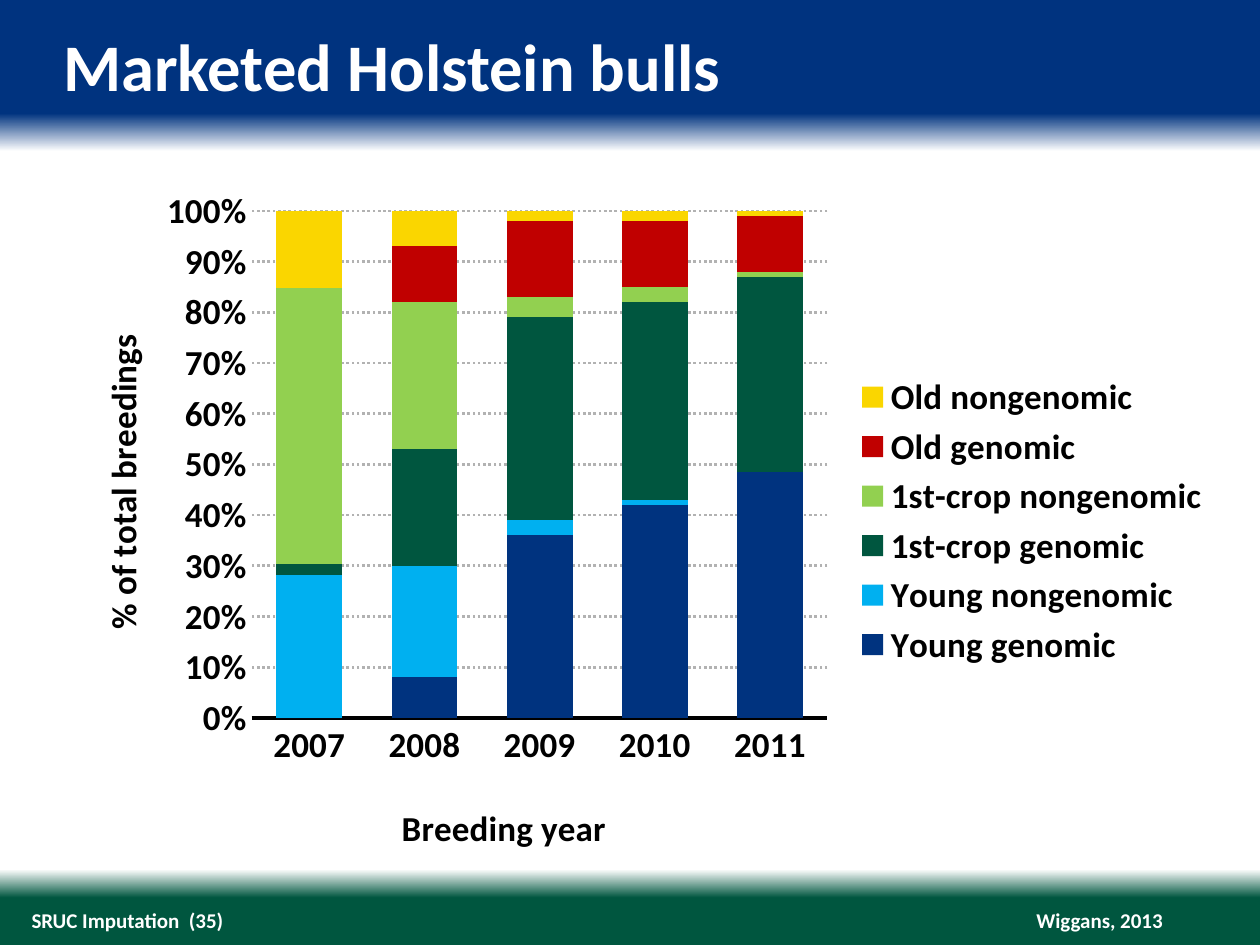
from lxml.etree import SubElement
from pptx import Presentation
from pptx.chart.data import CategoryChartData
from pptx.dml.color import RGBColor
from pptx.enum.chart import XL_CHART_TYPE, XL_LEGEND_POSITION, XL_TICK_MARK
from pptx.enum.dml import MSO_LINE
from pptx.enum.text import MSO_ANCHOR, PP_ALIGN
from pptx.oxml import parse_xml
from pptx.oxml.ns import nsdecls, qn
from pptx.util import Inches, Pt

FONT = "Calibri"
COLORS = {
    "navy": "00337F", "sky": "00B0F0", "forest": "00563F", "lime": "92D050",
    "red": "C00000", "yellow": "FAD600", "white": "FFFFFF", "black": "000000",
    "grid": "B2B2B2",
}
BACKGROUND_STOPS = [
    (0, "navy"), (12, "navy"), (16, "white"),
    (92, "white"), (95, "forest"), (100, "forest"),
]
YEARS = ["2007", "2008", "2009", "2010", "2011"]
SERIES = [
    ("Young genomic", [0, 8, 36, 42, 48], "navy"),
    ("Young nongenomic", [28, 22, 3, 1, 0], "sky"),
    ("1st-crop genomic", [2, 23, 40, 39, 38], "forest"),
    ("1st-crop nongenomic", [54, 29, 4, 3, 1], "lime"),
    ("Old genomic", [0, 11, 15, 13, 11], "red"),
    ("Old nongenomic", [15, 7, 2, 2, 1], "yellow"),
]


def rgb(name):
    return RGBColor.from_string(COLORS[name])


def format_font(font, size, color):
    font.name = FONT
    font.size = Pt(size)
    font.bold = True
    font.color.rgb = rgb(color)


def write_text(frame, text, size=12, color="white", align=PP_ALIGN.LEFT,
               anchor=MSO_ANCHOR.MIDDLE, wrap=True):
    frame.margin_left = frame.margin_right = 0
    frame.margin_top = frame.margin_bottom = 0
    frame.vertical_anchor = anchor
    frame.word_wrap = wrap
    para = frame.paragraphs[0]
    para.alignment = align
    span = para.add_run()
    span.text = text
    format_font(span.font, size, color)


def paint_background(page):
    fill = page.background.fill
    fill.gradient()
    fill.gradient_angle = 270
    stops = page.element.find(".//" + qn("a:gsLst"))
    for stop in list(stops):
        stops.remove(stop)
    for percent, name in BACKGROUND_STOPS:
        stops.append(parse_xml(
            f'<a:gs {nsdecls("a")} pos="{percent * 1000}">'
            f'<a:srgbClr val="{COLORS[name]}"/></a:gs>'))


def add_title(page, text):
    title = page.shapes.title
    title.left, title.top = Inches(0.5), Inches(0.2)
    title.width, title.height = Inches(9), Inches(0.6)
    write_text(title.text_frame, text, size=38, anchor=MSO_ANCHOR.TOP)


def add_footer(page, text, left, width, **text_format):
    box = page.shapes.add_textbox(
        Inches(left), Inches(7.2), Inches(width), Inches(0.2))
    write_text(box.text_frame, text, **text_format)


def place(element, left, top, width=None, height=None, inner=False):
    layout = element.get_or_add_layout() if hasattr(
        element, "get_or_add_layout") else element.find(qn("c:layout"))
    if layout is None:
        layout = parse_xml(f'<c:layout {nsdecls("c")}/>')
        element.insert(0, layout)
    for child in list(layout):
        layout.remove(child)
    manual = SubElement(layout, qn("c:manualLayout"))
    settings = [("layoutTarget", "inner")] if inner else []
    settings += [("xMode", "edge"), ("yMode", "edge"), ("x", left), ("y", top)]
    if width is not None:
        settings += [("w", width), ("h", height)]
    for tag, value in settings:
        SubElement(manual, qn("c:" + tag)).set("val", str(value))


def title_axis(axis, text, left, top, rotation=0):
    frame = axis.axis_title.text_frame
    para = frame.paragraphs[0]
    span = para.add_run()
    span.text = text
    format_font(span.font, 20, "black")
    body = axis.axis_title._element.find(".//" + qn("a:bodyPr"))
    body.set("rot", str(rotation * 60000))
    body.set("vert", "horz")
    place(axis.axis_title._element, left, top)


def format_axes(chart):
    years, shares = chart.category_axis, chart.value_axis
    for axis in (years, shares):
        axis.major_tick_mark = axis.minor_tick_mark = XL_TICK_MARK.NONE
        format_font(axis.tick_labels.font, 20, "black")
    years.format.line.color.rgb = rgb("black")
    years.format.line.width = Pt(2.5)
    shares.format.line.fill.background()
    shares.tick_labels.number_format = "0%"
    shares.tick_labels.number_format_is_linked = False
    shares.has_major_gridlines = True
    grid = shares.major_gridlines.format.line
    grid.color.rgb = rgb("grid")
    grid.width = Pt(1.5)
    grid.dash_style = MSO_LINE.ROUND_DOT
    title_axis(years, "Breeding year", 0.29, 0.9)
    title_axis(shares, "% of total breedings", 0.03, 0.22, rotation=-90)


def add_breeding_chart(page):
    chart_data = CategoryChartData(number_format="0")
    chart_data.categories = YEARS
    for name, values, _ in SERIES:
        chart_data.add_series(name, values)
    chart = page.shapes.add_chart(
        XL_CHART_TYPE.COLUMN_STACKED_100, Inches(0.45), Inches(1.4),
        Inches(9.27), Inches(5.47), chart_data).chart
    chart.has_title = False
    format_font(chart.font, 20, "black")
    plot = chart.plots[0]
    plot.gap_width = 75
    plot.overlap = 100
    plot.vary_by_categories = False
    for series, (_, _, color) in zip(plot.series, SERIES):
        series.format.fill.solid()
        series.format.fill.fore_color.rgb = rgb(color)
    format_axes(chart)
    chart.has_legend = True
    chart.legend.position = XL_LEGEND_POSITION.RIGHT
    chart.legend.include_in_layout = False
    format_font(chart.legend.font, 20, "black")
    place(chart.legend._element, 0.68, 0.28, 0.31, 0.44)
    plot_area = chart._chartSpace.find(".//" + qn("c:plotArea"))
    place(plot_area, 0.167, 0.05, 0.493, 0.736, inner=True)


def main():
    deck = Presentation()
    deck.slide_width, deck.slide_height = Inches(10), Inches(7.5)
    page = deck.slides.add_slide(deck.slide_layouts[5])
    paint_background(page)
    add_footer(page, "Wiggans, 2013", 8.21, 1.02,
               align=PP_ALIGN.RIGHT, wrap=False)
    add_footer(page, "SRUC Imputation  (35)", 0.25, 5.22)
    add_title(page, "Marketed Holstein bulls")
    add_breeding_chart(page)
    deck.save("out.pptx")


if __name__ == "__main__":
    main()
